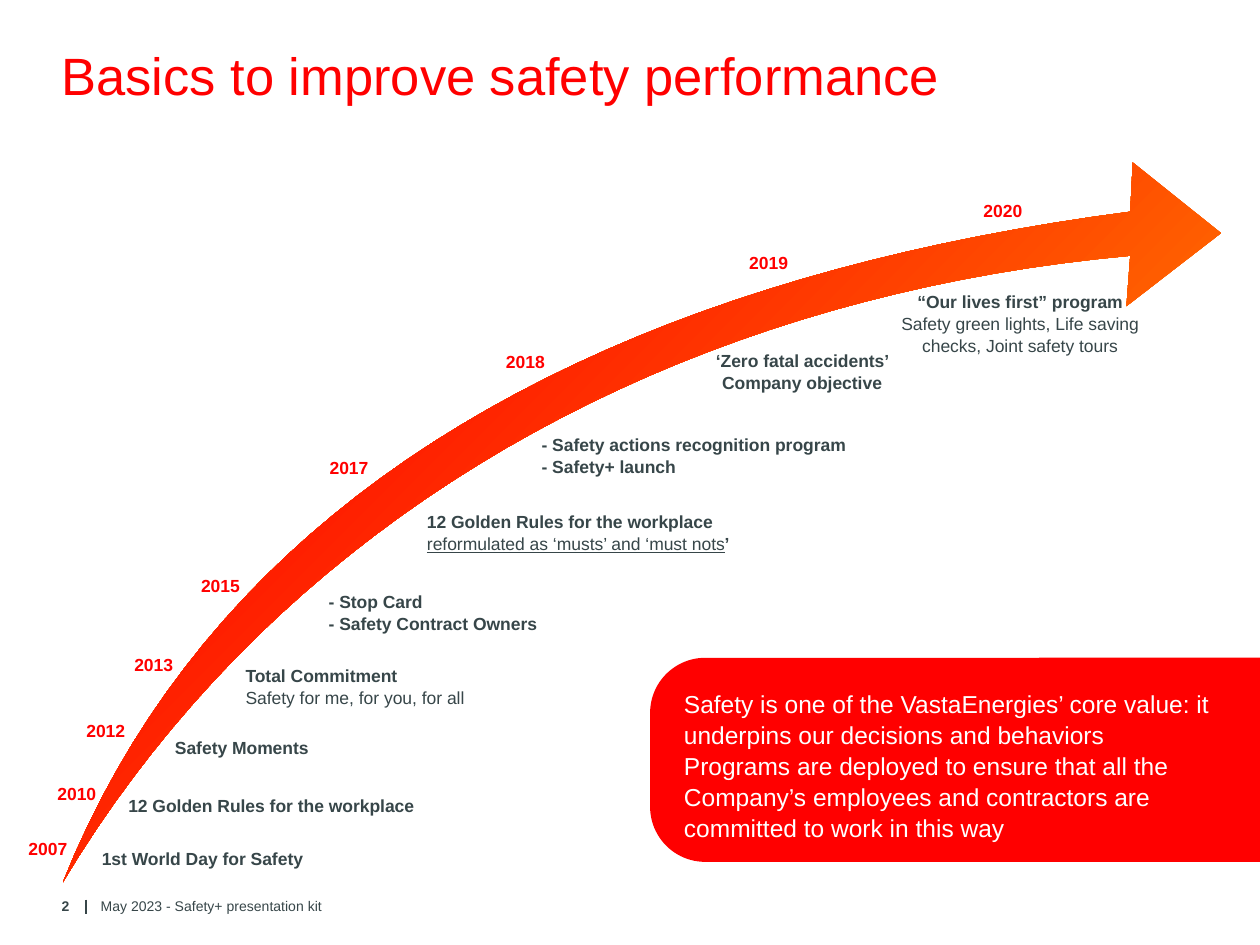
from lxml.etree import SubElement
from pptx import Presentation
from pptx.dml.color import RGBColor
from pptx.enum.shapes import MSO_CONNECTOR, MSO_SHAPE
from pptx.enum.text import MSO_ANCHOR as Anchor, PP_ALIGN as Align
from pptx.oxml import parse_xml
from pptx.oxml.ns import nsdecls, qn
from pptx.util import Inches, Pt

COLORS = {"red": "FF0000", "orange": "FF6E00", "slate": "374649", "white": "FFFFFF"}
FONT = "Arial"
DATE_WIDTH = 0.76
CURVE_STEPS = 40


def bezier(start, control1, control2, end):
    points = []
    for step in range(1, CURVE_STEPS + 1):
        t = step / CURVE_STEPS
        weights = ((1 - t) ** 3, 3 * t * (1 - t) ** 2, 3 * t * t * (1 - t), t ** 3)
        corners = (start, control1, control2, end)
        points.append(tuple(sum(w * c[axis] for w, c in zip(weights, corners)) for axis in (0, 1)))
    return points


class Deck:
    def __init__(self, width, height):
        self.presentation = Presentation()
        self.presentation.slide_width = Inches(width)
        self.presentation.slide_height = Inches(height)
        self.slide = self.presentation.slides.add_slide(self.presentation.slide_layouts[6])
        self.shapes = self.slide.shapes

    def color(self, name):
        return RGBColor.from_string(COLORS[name])

    def text(self, box, lines, size=10, color="slate", align=Align.LEFT,
             anchor=Anchor.TOP, spacing=1.05):
        frame = self.shapes.add_textbox(*map(Inches, box)).text_frame
        frame.word_wrap = True
        frame.vertical_anchor = anchor
        for index, line in enumerate(lines):
            paragraph = frame.add_paragraph() if index else frame.paragraphs[0]
            paragraph.alignment = align
            paragraph.line_spacing = spacing
            for words, style in line:
                run = paragraph.add_run()
                run.text = words
                run.font.name = FONT
                run.font.size = Pt(size)
                run.font.bold = "b" in style
                run.font.underline = "u" in style
                run.font.color.rgb = self.color(color)

    def date(self, center, top, year):
        self.text((center - DATE_WIDTH / 2, top, DATE_WIDTH, 0.25), [[(year, "b")]],
                  color="red", align=Align.CENTER)

    def panel(self, box, rounding):
        panel = self.shapes.add_shape(MSO_SHAPE.ROUND_2_SAME_RECTANGLE, *map(Inches, box))
        panel.adjustments[0], panel.adjustments[1] = rounding, 0
        panel.rotation = 270
        panel.shadow.inherit = False
        panel.fill.solid()
        panel.fill.fore_color.rgb = self.color("red")
        panel.line.fill.background()

    def gradient_outline(self, points):
        start, *rest = [(Inches(x), Inches(y)) for x, y in points]
        builder = self.shapes.build_freeform(*start)
        builder.add_line_segments(rest, close=True)
        outline = builder.convert_to_shape()
        outline.shadow.inherit = False
        outline.line.fill.background()
        gradient = parse_xml(
            f'<a:gradFill {nsdecls("a")} rotWithShape="1"><a:gsLst>'
            f'<a:gs pos="17000"><a:srgbClr val="{COLORS["red"]}"/></a:gs>'
            f'<a:gs pos="74000"><a:srgbClr val="{COLORS["orange"]}"/></a:gs>'
            '</a:gsLst><a:path path="circle"><a:fillToRect r="100000" b="100000"/></a:path>'
            '</a:gradFill>')
        outline.element.spPr.find(qn("a:custGeom")).addnext(gradient)

    def rule(self, x, top, bottom):
        rule = self.shapes.add_connector(MSO_CONNECTOR.STRAIGHT, *map(Inches, (x, top, x, bottom)))
        rule.line.color.rgb = self.color("slate")
        rule.line.width = Pt(1)
        SubElement(rule.element.spPr, qn("a:effectLst"))

    def save(self):
        self.presentation.save("out.pptx")


MILESTONES = [
    ((0.71, 6.67, 2.57, 0.37), Align.LEFT, [[("1st World Day for Safety", "b")]]),
    ((0.92, 6.25, 2.63, 0.25), Align.LEFT, [[("12 Golden Rules for the workplace", "b")]]),
    ((1.29, 5.79, 1.43, 0.25), Align.LEFT, [[("Safety Moments", "b")]]),
    ((1.85, 5.22, 2.88, 0.43), Align.LEFT,
     [[("Total Commitment", "b")], [("Safety for me, for you, for all", "")]]),
    ((2.51, 4.63, 2.09, 0.44), Align.LEFT,
     [[("- Stop Card", "b")], [("- Safety Contract Owners", "b")]]),
    ((3.29, 4, 3.25, 0.51), Align.LEFT,
     [[("12 Golden Rules for the workplace", "b")],
      [("reformulated as ‘musts’ and ‘must nots", "u"), ("’", "b")]]),
    ((4.2, 3.39, 2.64, 0.56), Align.LEFT,
     [[("- Safety actions recognition program", "b")], [("- Safety+ launch", "b")]]),
    ((5.47, 2.72, 1.79, 0.44), Align.CENTER,
     [[("‘Zero fatal accidents’ Company objective", "b")]]),
    ((6.84, 2.25, 2.51, 0.78), Align.CENTER,
     [[("“Our lives first” program", "b")],
      [("Safety green lights, Life saving checks, Joint safety tours", "")]]),
]

DATES = [
    (0.38, 6.59, "2007"), (0.61, 6.16, "2010"), (0.84, 5.66, "2012"),
    (1.22, 5.13, "2013"), (1.75, 4.51, "2015"), (2.77, 3.57, "2017"),
    (4.17, 2.73, "2018"), (6.1, 1.94, "2019"), (7.96, 1.53, "2020"),
]

CORE_VALUE = [
    "Safety is one of the VastaEnergies’ core value: it underpins our decisions and behaviors",
    "Programs are deployed to ensure that all the Company’s employees and contractors are "
    "committed to work in this way",
]


def main():
    deck = Deck(10, 7.5)
    deck.rule(0.68, 7.14, 7.25)
    deck.text((0.39, 0.27, 7.87, 0.94), [[("Basics to improve safety performance", "")]],
              size=30, color="red")
    deck.text((0.7, 7.05, 2.95, 0.28), [[("May 2023 - Safety+ presentation kit", "")]],
              size=8, anchor=Anchor.MIDDLE, spacing=1)
    deck.text((0.18, 7.05, 0.47, 0.28), [[("2", "b")]],
              size=8, align=Align.RIGHT, anchor=Anchor.MIDDLE, spacing=1)

    deck.panel((6.77, 3.61, 1.62, 4.84), 0.27)
    deck.text((5.33, 5.41, 4.63, 1.27), [[(sentence, "")] for sentence in CORE_VALUE],
              size=14, color="white")

    for box, align, lines in MILESTONES:
        deck.text(box, lines, align=align)

    tail, upper_neck, lower_neck = (0.5, 7), (8.97, 1.68), (8.97, 2.03)
    upper_edge = bezier(tail, (1.75, 3.88), (4.85, 2.22), upper_neck)
    lower_edge = bezier(lower_neck, (5.33, 2.36), (2.23, 4.11), tail)
    head = [(8.99, 1.29), (9.69, 1.85), (8.94, 2.43), lower_neck]
    deck.gradient_outline([tail, *upper_edge, *head, *lower_edge])

    for center, top, year in DATES:
        deck.date(center, top, year)
    deck.save()


if __name__ == "__main__":
    main()
